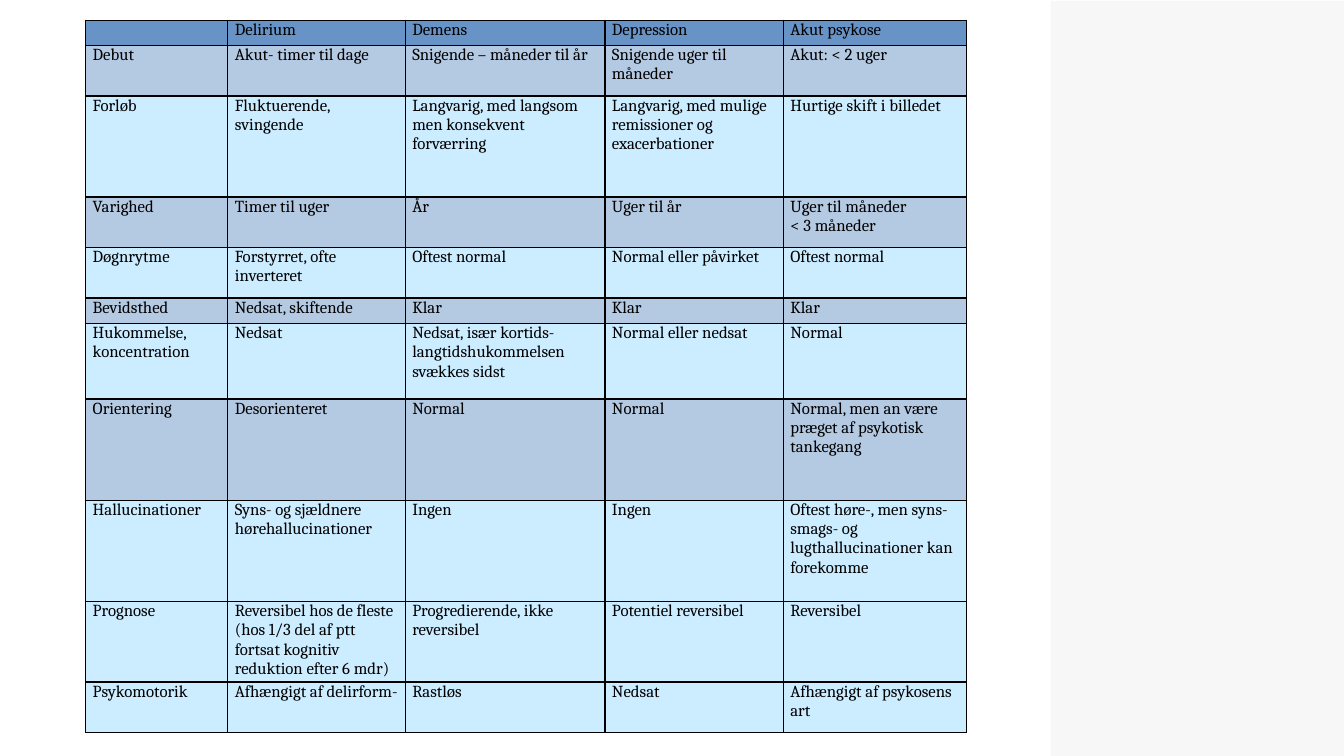
from dataclasses import dataclass

from lxml.etree import SubElement
from pptx import Presentation
from pptx.dml.color import RGBColor as RGB
from pptx.enum.shapes import MSO_SHAPE as SHAPE
from pptx.oxml.ns import qn
from pptx.util import Inches, Pt


@dataclass(frozen=True)
class Theme:
    """Colours, type and line sizes of the slide."""
    font: str = "Cambria"
    size: int = 12
    ink: str = "000000"
    header: str = "6893C6"
    dark: str = "B4C9E2"
    light: str = "CCECFF"
    panel: str = "D9D9D9"
    panel_alpha: int = 20
    border: int = 1


THEME = Theme()
WIDTH, HEIGHT = 13.33, 7.5
LEFT, TOP, TABLE_HEIGHT = 0.85, 0.2, 7.07
COLUMNS = [1.41, 1.76, 1.98, 1.77, 1.82]
INSET = 0.07
ROWS = [
    (1, THEME.header, ["", "Delirium", "Demens", "Depression", "Akut psykose"]),
    (2, THEME.dark, ["Debut", "Akut- timer til dage", "Snigende – måneder til år",
                     "Snigende uger til måneder", "Akut: < 2 uger"]),
    (4, THEME.light, ["Forløb", "Fluktuerende, svingende",
                      "Langvarig, med langsom men konsekvent forværring",
                      "Langvarig, med mulige remissioner og exacerbationer",
                      "Hurtige skift i billedet"]),
    (2, THEME.dark, ["Varighed", "Timer til uger", "År", "Uger til år",
                     "Uger til måneder\n< 3 måneder"]),
    (2, THEME.light, ["Døgnrytme", "Forstyrret, ofte inverteret", "Oftest normal",
                      "Normal eller påvirket", "Oftest normal"]),
    (1, THEME.dark, ["Bevidsthed", "Nedsat, skiftende", "Klar", "Klar", "Klar"]),
    (3, THEME.light, ["Hukommelse, koncentration", "Nedsat",
                      "Nedsat, især kortids-langtidshukommelsen svækkes sidst",
                      "Normal eller nedsat", "Normal"]),
    (4, THEME.dark, ["Orientering", "Desorienteret", "Normal", "Normal",
                     "Normal, men an være præget af psykotisk tankegang"]),
    (4, THEME.light, ["Hallucinationer", "Syns- og sjældnere\nhørehallucinationer",
                      "Ingen", "Ingen",
                      "Oftest høre-, men syns- smags- og lugthallucinationer kan forekomme"]),
    (3.2, THEME.light, ["Prognose",
                        "Reversibel hos de fleste (hos 1/3 del af ptt fortsat kognitiv "
                        "reduktion efter 6 mdr)",
                        "Progredierende, ikke reversibel", "Potentiel reversibel",
                        "Reversibel"]),
    (2, THEME.light, ["Psykomotorik", "Afhængigt af delirform-", "Rastløs", "Nedsat",
                      "Afhængigt af psykosens art"]),
]


def paint(fill, color):
    """Give a fill one solid colour."""
    fill.solid()
    fill.fore_color.rgb = RGB.from_string(color)


def add_panel(s):
    """Add the translucent panel along the right side."""
    sp = s.shapes.add_shape(SHAPE.RECTANGLE, Inches(10.42), Inches(0.01),
                            Inches(WIDTH - 10.42), Inches(HEIGHT))
    sp.shadow.inherit = False
    sp.line.fill.background()
    paint(sp.fill, THEME.panel)
    color = sp._element.spPr.find(qn("a:solidFill"))[0]
    SubElement(color, qn("a:alpha"), val=str(THEME.panel_alpha * 1000))


def add_borders(cell):
    """Draw a thin line on all four sides of a cell."""
    tc_pr = cell._tc.get_or_add_tcPr()
    for side in ("lnL", "lnR", "lnT", "lnB"):
        ln = SubElement(tc_pr, qn(f"a:{side}"), w=str(Pt(THEME.border)))
        solid = SubElement(ln, qn("a:solidFill"))
        SubElement(solid, qn("a:srgbClr"), val=THEME.ink)


def fill_cell(cell, text, color):
    """Set the text, insets, borders and fill of a cell."""
    cell.margin_left = cell.margin_right = Inches(INSET)
    cell.margin_top = cell.margin_bottom = 0
    add_borders(cell)
    paint(cell.fill, color)
    cell.text_frame.text = text
    for p in cell.text_frame.paragraphs:
        p.font.name = THEME.font
        p.font.size = Pt(THEME.size)
        p.font.color.rgb = RGB.from_string(THEME.ink)
        if not text:
            SubElement(p._p, qn("a:endParaRPr"), sz=str(THEME.size * 100))


def add_comparison(s):
    """Add the table that compares the four conditions."""
    table = s.shapes.add_table(len(ROWS), len(COLUMNS), Inches(LEFT), Inches(TOP),
                               Inches(sum(COLUMNS)), Inches(TABLE_HEIGHT)).table
    table.first_row = table.horz_banding = False
    for column, width in zip(table.columns, COLUMNS):
        column.width = Inches(width)
    unit = TABLE_HEIGHT / sum(units for units, _, _ in ROWS)
    for row, (units, color, texts) in zip(table.rows, ROWS):
        row.height = Inches(units * unit)
        for cell, text in zip(row.cells, texts):
            fill_cell(cell, text, color)


def main():
    """Build the slide and save it."""
    prs = Presentation()
    prs.slide_width, prs.slide_height = Inches(WIDTH), Inches(HEIGHT)
    s = prs.slides.add_slide(prs.slide_layouts[6])
    add_panel(s)
    add_comparison(s)
    prs.save("out.pptx")


if __name__ == "__main__":
    main()
